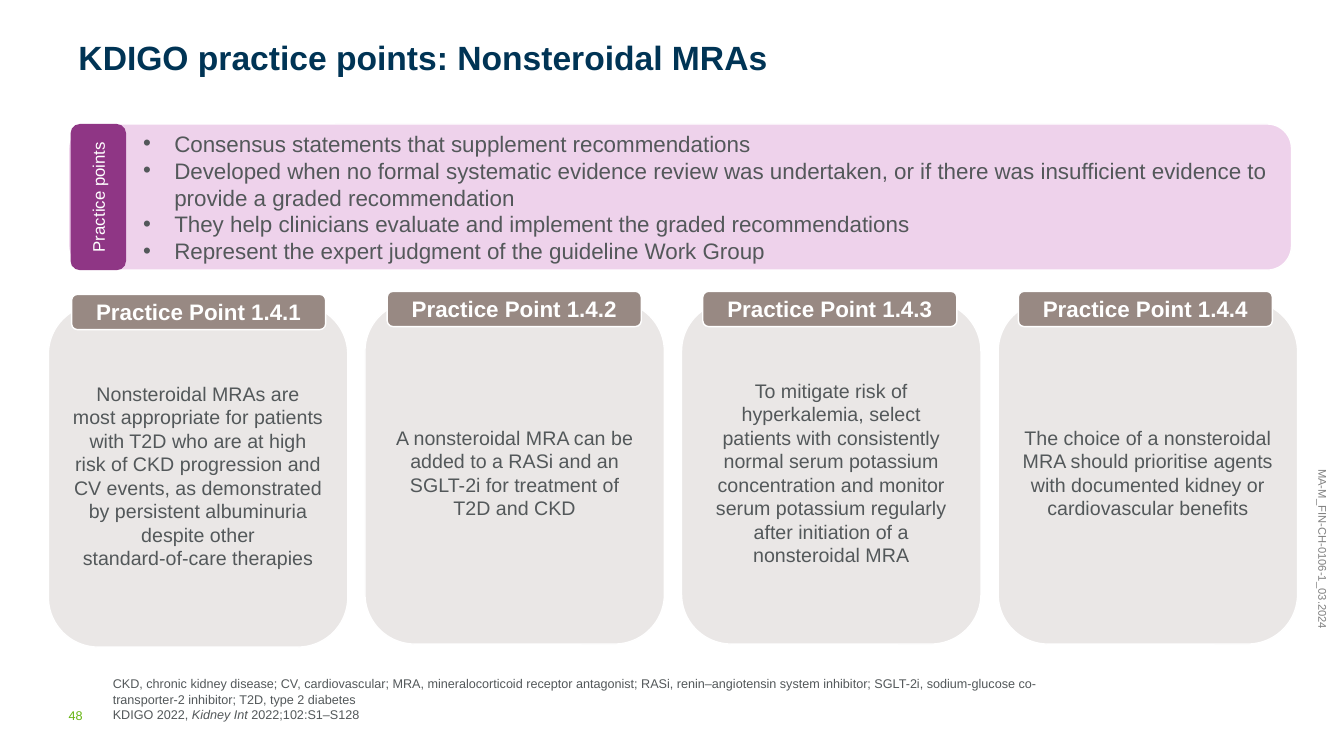
from pptx import Presentation
from pptx.dml.color import RGBColor
from pptx.enum.shapes import MSO_SHAPE
from pptx.enum.text import MSO_ANCHOR, PP_ALIGN
from pptx.oxml.ns import qn
from pptx.util import Inches, Pt
from lxml.etree import SubElement

SLIDE_WIDTH, SLIDE_HEIGHT = 13.33, 7.5
FONT = "Arial"
WHITE, GREY, NAVY = "FFFFFF", "53585A", "003455"
LILAC, PURPLE, SAND, TAUPE = "EED2EB", "8F3685", "EAE7E6", "988983"
GREEN, CODE_GREY = "66B512", "808080"

BANNER_POINTS = [
    "Consensus statements that supplement recommendations",
    "Developed when no formal systematic evidence review was undertaken, or if there was "
    "insufficient evidence to provide a graded recommendation",
    "They help clinicians evaluate and implement the graded recommendations",
    "Represent the expert judgment of the guideline Work Group",
]

# Heading, paragraphs, and how far the card sits below the row
CARDS = [
    ("Practice Point 1.4.1",
     ["Nonsteroidal MRAs are most appropriate for patients with T2D who are at high risk of "
      "CKD progression and CV events, as demonstrated by persistent albuminuria despite other",
      "standard-of-care therapies"], 0.03),
    ("Practice Point 1.4.2",
     ["A nonsteroidal MRA can be added to a RASi and an SGLT-2i for treatment of T2D and CKD"], 0),
    ("Practice Point 1.4.3",
     ["To mitigate risk of hyperkalemia, select patients with consistently normal serum "
      "potassium concentration and monitor serum potassium regularly after initiation of a "
      "nonsteroidal MRA"], 0),
    ("Practice Point 1.4.4",
     ["The choice of a nonsteroidal MRA should prioritise agents with documented kidney or "
      "cardiovascular benefits"], 0),
]

ABBREVIATIONS = (
    "CKD, chronic kidney disease; CV, cardiovascular; MRA, mineralocorticoid receptor "
    "antagonist; RASi, renin–angiotensin system inhibitor; SGLT-2i, sodium-glucose "
    "co-transporter-2 inhibitor; T2D, type 2 diabetes")


def color(hex_text):
    return RGBColor.from_string(hex_text)


def add_bullet(paragraph, left, hanging):
    properties = paragraph._p.get_or_add_pPr()
    properties.set("marL", str(Inches(left)))
    properties.set("indent", str(-Inches(hanging)))
    SubElement(properties, qn("a:buFont")).set("typeface", FONT)
    SubElement(properties, qn("a:buChar")).set("char", "•")


def write(shape, paragraphs, size, hex_text, bold=False, align=PP_ALIGN.LEFT,
          anchor=MSO_ANCHOR.TOP, bulleted=False):
    """Fill a shape with paragraphs, each a list of (text, italic) runs."""
    frame = shape.text_frame
    frame.word_wrap = True
    frame.vertical_anchor = anchor
    for index, runs in enumerate(paragraphs):
        paragraph = frame.paragraphs[0] if index == 0 else frame.add_paragraph()
        if bulleted:
            add_bullet(paragraph, 0.88, 0.31)
        paragraph.alignment = align
        for text, italic in runs:
            run = paragraph.add_run()
            run.text = text
            run.font.name = FONT
            run.font.size = Pt(size)
            run.font.bold = bold
            run.font.italic = italic
            run.font.color.rgb = color(hex_text)
    return frame


def plain(texts):
    return [[(text, False)] for text in texts]


def add_text_box(slide, box):
    return slide.shapes.add_textbox(*map(Inches, box))


def add_panel(slide, box, fill, outlined=True):
    shape = slide.shapes.add_shape(MSO_SHAPE.ROUNDED_RECTANGLE, *map(Inches, box))
    shape.shadow.inherit = False
    shape.fill.solid()
    shape.fill.fore_color.rgb = color(fill)
    if outlined:
        shape.line.color.rgb = color(WHITE)
        shape.line.width = Pt(1)
    else:
        shape.line.fill.background()
    return shape


def add_title(slide, box):
    frame = write(add_text_box(slide, box),
                  plain(["KDIGO practice points: Nonsteroidal MRAs"]), 24, NAVY, bold=True)
    frame.paragraphs[0].line_spacing = 0.9


def add_banner(slide, box):
    """Lilac panel of bullets with an upright purple tab on its left edge."""
    left, top, width, height = box
    write(add_panel(slide, box, LILAC), plain(BANNER_POINTS), 16, GREY,
          anchor=MSO_ANCHOR.MIDDLE, bulleted=True)
    tab_width = 0.55
    tab_left = left + 0.02 + (tab_width - height) / 2
    tab_top = top + (height - tab_width) / 2
    tab = add_panel(slide, (tab_left, tab_top, height, tab_width), PURPLE, outlined=False)
    tab.rotation = 270
    write(tab, plain(["Practice points"]), 12, WHITE,
          align=PP_ALIGN.CENTER, anchor=MSO_ANCHOR.MIDDLE)


def add_cards(slide, box):
    """Row of equal cards, each with a heading bar across its top edge."""
    left, top, width, height = box
    card_width, heading_width, heading_height = 2.97, 2.52, 0.35
    card_pitch = (width - card_width) / (len(CARDS) - 1)
    heading_pitch = card_pitch - 0.01
    for column, (heading, texts, drop) in enumerate(CARDS):
        card = add_panel(slide, (left + column * card_pitch, top + drop, card_width, height), SAND)
        write(card, plain(texts), 14, GREY, align=PP_ALIGN.CENTER, anchor=MSO_ANCHOR.MIDDLE)
        bar = add_panel(slide, (left + 0.23 + column * heading_pitch, top - 0.1 + drop,
                                heading_width, heading_height), TAUPE)
        write(bar, plain([heading]), 16, WHITE, bold=True,
              align=PP_ALIGN.CENTER, anchor=MSO_ANCHOR.MIDDLE)


def add_footer(slide, box):
    """Page number followed by abbreviations and the reference."""
    left, top, width, height = box
    number_width = 0.34
    number = add_text_box(slide, (left, top + 0.16, number_width, 0.4))
    write(number, plain(["48"]), 9, GREEN, anchor=MSO_ANCHOR.BOTTOM).margin_left = 0
    notes = add_text_box(slide, (left + number_width, top, width - number_width, height))
    reference = [("KDIGO 2022, ", False), ("Kidney Int ", True), ("2022;102:S1–S128", False)]
    write(notes, plain([ABBREVIATIONS]) + [reference], 9, GREY, anchor=MSO_ANCHOR.BOTTOM)


def add_document_code(slide, box):
    shape = add_text_box(slide, box)
    shape.rotation = 90
    write(shape, plain(["MA-M_FIN-CH-0106-1_03.2024"]), 8, CODE_GREY)


def main():
    presentation = Presentation()
    presentation.slide_width = Inches(SLIDE_WIDTH)
    presentation.slide_height = Inches(SLIDE_HEIGHT)
    slide = presentation.slides.add_slide(presentation.slide_layouts[6])
    margin = 0.68
    add_document_code(slide, (11.9, 5.48, 2.26, 0.41))
    add_title(slide, (margin, 0.36, 10.35, 1.05))
    add_footer(slide, (margin, 6.66, 10.36, 0.55))
    add_banner(slide, (margin, 1.23, 12.13, 1.45))
    add_cards(slide, (0.48, 2.99, 12.39, 3.4))
    presentation.save("out.pptx")


if __name__ == "__main__":
    main()
